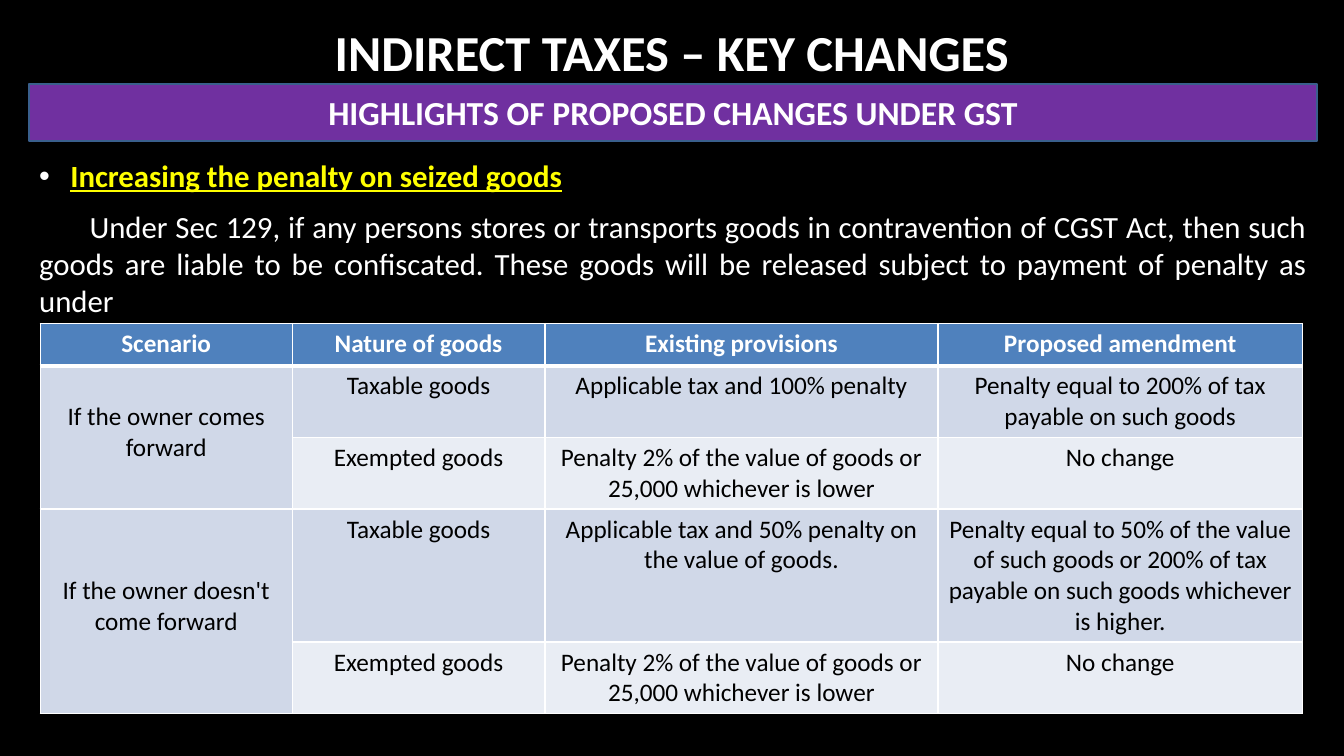
from lxml import etree
from pptx import Presentation
from pptx import util as u
from pptx.dml.color import RGBColor
from pptx.enum import shapes, text
from pptx.oxml import ns

BLACK = RGBColor(0, 0, 0)
WHITE = RGBColor(255, 255, 255)
YELLOW = RGBColor(255, 255, 0)
PURPLE = RGBColor(0x70, 0x30, 0xA0)
EDGE = RGBColor(0x3A, 0x5F, 0x8C)
BLUE = RGBColor(0x4F, 0x81, 0xBD)
DARK = RGBColor(0xD0, 0xD8, 0xE8)
PALE = RGBColor(0xE9, 0xED, 0xF4)

COLS = [2.5, 2.51, 3.9, 3.62]
ROWS = [0.42, 0.71, 0.71, 1.32, 0.71]
LOWER = "Penalty 2% of the value of goods or 25,000 whichever is lower"
CELLS = [
    ["Scenario", "Nature of goods", "Existing provisions", "Proposed amendment"],
    ["If the owner comes forward", "Taxable goods", "Applicable tax and 100% penalty",
     "Penalty equal to 200% of tax payable on such goods"],
    ["", "Exempted goods", LOWER, "No change"],
    ["If the owner doesn't come forward", "Taxable goods",
     "Applicable tax and 50% penalty on the value of goods.",
     "Penalty equal to 50% of the value of such goods or 200% of tax payable "
     "on such goods whichever is higher."],
    ["", "Exempted goods", LOWER, "No change"],
]


def style(para, size, color, bold=False, align=text.PP_ALIGN.CENTER):
    para.alignment = align
    for run in para.runs:
        font = run.font
        font.name = "Calibri"
        font.size = u.Pt(size)
        font.bold = bold
        font.color.rgb = color


def inch(box):
    return [u.Inches(side) for side in box]


def title(slide, box):
    frame = slide.shapes.add_textbox(*inch(box)).text_frame
    frame.word_wrap = True
    frame.vertical_anchor = text.MSO_ANCHOR.MIDDLE
    frame.text = "INDIRECT TAXES – KEY CHANGES"
    style(frame.paragraphs[0], 36, WHITE, True)


def band(slide, box):
    bar = slide.shapes.add_shape(shapes.MSO_SHAPE.RECTANGLE, *inch(box))
    bar.shadow.inherit = False
    bar.fill.solid()
    bar.fill.fore_color.rgb = PURPLE
    bar.line.color.rgb = EDGE
    bar.line.width = u.Pt(1.5)
    frame = bar.text_frame
    frame.vertical_anchor = text.MSO_ANCHOR.MIDDLE
    frame.text = "HIGHLIGHTS OF PROPOSED CHANGES UNDER GST"
    style(frame.paragraphs[0], 24, WHITE, True)


def body(slide, box):
    frame = slide.shapes.add_textbox(*inch(box)).text_frame
    frame.word_wrap = True
    head = frame.paragraphs[0]
    props = head._p.get_or_add_pPr()
    props.set("marL", str(u.Inches(0.31)))
    props.set("indent", str(u.Inches(-0.31)))
    tint = etree.SubElement(props, ns.qn("a:buClr"))
    etree.SubElement(tint, ns.qn("a:srgbClr"), val=str(WHITE))
    etree.SubElement(props, ns.qn("a:buFont"), typeface="Arial")
    etree.SubElement(props, ns.qn("a:buChar"), char="•")
    head.text = "Increasing the penalty on seized goods"
    head.space_after = u.Pt(10)
    style(head, 22, YELLOW, True, text.PP_ALIGN.JUSTIFY)
    head.runs[0].font.underline = True

    para = frame.add_paragraph()
    para._p.get_or_add_pPr().set("indent", str(u.Inches(0.5)))
    para.text = ("Under Sec 129, if any persons stores or transports goods in "
                 "contravention of CGST Act, then such goods are liable to be "
                 "confiscated. These goods will be released subject to payment "
                 "of penalty as under")
    style(para, 22, WHITE, align=text.PP_ALIGN.JUSTIFY)


def border(cell, row):
    props = cell._tc.get_or_add_tcPr()
    wide = {("B", 0), ("T", 1)}
    for side in "LRTB":
        width = u.Pt(3 if (side, row) in wide else 1)
        line = etree.SubElement(props, ns.qn("a:ln" + side), w=str(width))
        fill = etree.SubElement(line, ns.qn("a:solidFill"))
        etree.SubElement(fill, ns.qn("a:srgbClr"), val=str(WHITE))


def table(slide, box):
    grid = slide.shapes.add_table(len(ROWS), len(COLS), *inch(box)).table
    for part, size in zip(grid.columns, COLS):
        part.width = u.Inches(box[2] * size / sum(COLS))
    for part, size in zip(grid.rows, ROWS):
        part.height = u.Inches(box[3] * size / sum(ROWS))
    for top in (1, 3):
        grid.cell(top, 0).merge(grid.cell(top + 1, 0))
    for row, words in enumerate(CELLS):
        for col, word in enumerate(words):
            cell = grid.cell(row, col)
            border(cell, row)
            cell.fill.solid()
            shade = DARK if col == 0 or row % 2 else PALE
            cell.fill.fore_color.rgb = shade if row else BLUE
            if word:
                cell.text_frame.text = word
                style(cell.text_frame.paragraphs[0], 18, BLACK if row else WHITE, row == 0)
            if cell.is_merge_origin:
                cell.vertical_anchor = text.MSO_ANCHOR.MIDDLE
                cell.margin_bottom = u.Inches(0.15)


def main():
    deck = Presentation()
    deck.slide_width, deck.slide_height = u.Inches(13.33), u.Inches(7.5)
    slide = deck.slides.add_slide(deck.slide_layouts[6])
    slide.background.fill.solid()
    slide.background.fill.fore_color.rgb = BLACK
    title(slide, (0, 0, 13.33, 1.01))
    body(slide, (0.29, 1.51, 12.77, 1.7))
    band(slide, (0.29, 0.83, 12.77, 0.57))
    table(slide, (0.4, 3.21, 12.52, sum(ROWS)))
    deck.save("out.pptx")


if __name__ == "__main__":
    main()
